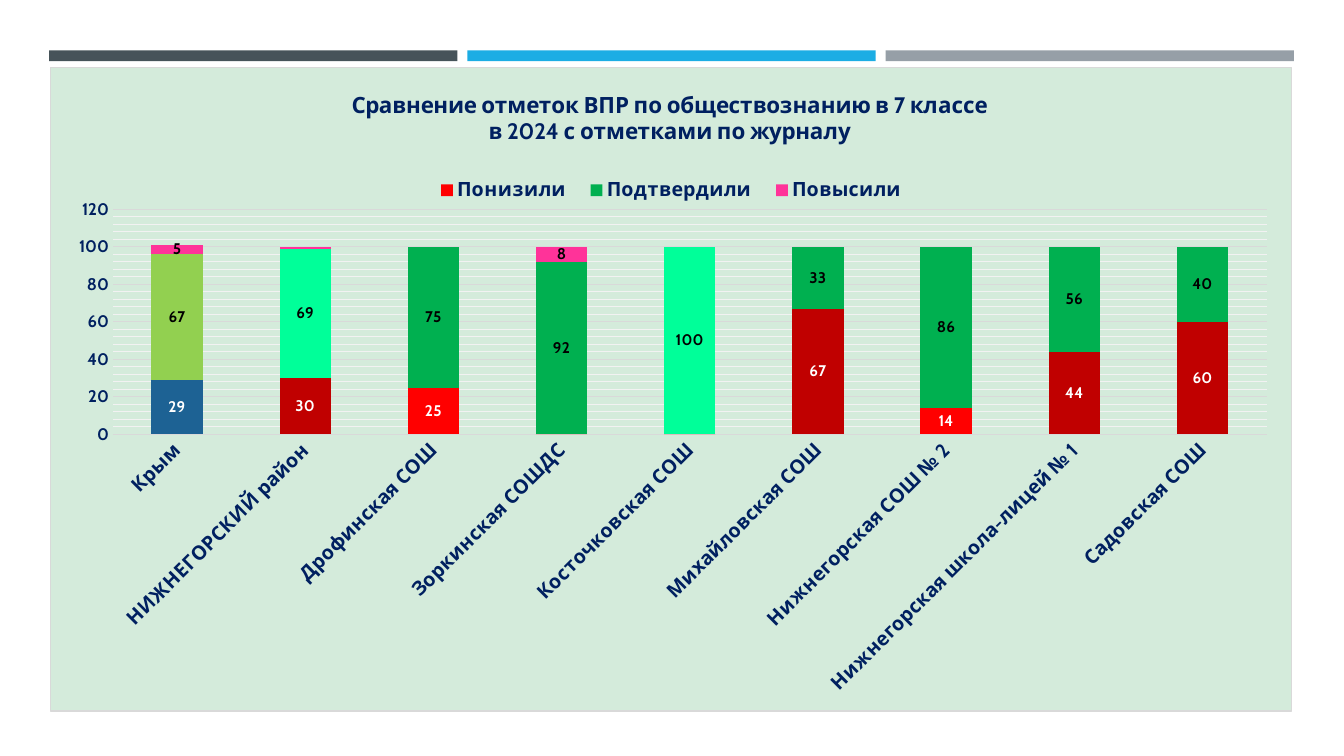
from dataclasses import dataclass

from lxml import etree
from pptx import Presentation
from pptx import util as u
from pptx.chart.data import CategoryChartData
from pptx.dml.color import RGBColor
from pptx.enum import chart as ch
from pptx.enum import shapes
from pptx.oxml import parse_xml
from pptx.oxml.ns import nsdecls, qn


@dataclass(frozen=True)
class Theme:
    """Colours, font and type sizes of the slide."""
    font: str = "Cabin"
    navy: str = "002060"
    black: str = "000000"
    white: str = "FFFFFF"
    panel: str = "D4EBDB"
    rule: str = "D9D9D9"
    minor_rule: str = "F2F2F2"
    strips: tuple = ("465359", "1CADE4", "969FA7")
    title_size: int = 16
    label_size: int = 14
    scale_size: int = 12
    value_size: int = 11


THEME = Theme()
SCHOOLS = ["Крым", "НИЖНЕГОРСКИЙ район", "Дрофинская СОШ", "Зоркинская СОШДС",
           "Косточковская СОШ", "Михайловская СОШ", "Нижнегорская СОШ № 2",
           "Нижнегорская школа-лицей № 1", "Садовская СОШ"]
DARK_RED, MINT = "C00000", "00FF99"
MARKS = [
    ("Понизили", [29, 30, 25, 0, 0, 67, 14, 44, 60], "FF0000", THEME.white,
     {0: "1D6294", 1: DARK_RED, 5: DARK_RED, 7: DARK_RED, 8: DARK_RED}),
    ("Подтвердили", [67, 69, 75, 92, 100, 33, 86, 56, 40], "00B050", THEME.black,
     {0: "92D050", 1: MINT, 4: MINT}),
    ("Повысили", [5, 1, 0, 8, 0, 0, 0, 0, 0], "FF3399", THEME.black, {}),
]
SMALLEST_LABELLED = 5


def paint(fill, colour):
    """Make a fill solid in the given colour."""
    fill.solid()
    fill.fore_color.rgb = RGBColor.from_string(colour)


def style_font(font, size, colour):
    """Apply the bold slide font in a size and colour."""
    font.name, font.size, font.bold = THEME.font, u.Pt(size), True
    font.color.rgb = RGBColor.from_string(colour)


def rule_line(line, colour, width=0.75):
    """Draw a line in a colour and width in points."""
    paint(line.fill, colour)
    line.width = u.Pt(width)


def outline_xml(colour, fill=""):
    """Return chart shape properties with a thin line and an optional fill."""
    return parse_xml(
        f'<c:spPr {nsdecls("c", "a")}>{fill}<a:ln w="9525"><a:solidFill>'
        f'<a:srgbClr val="{colour}"/></a:solidFill></a:ln></c:spPr>')


def place(part, index, **box):
    """Give a chart part a manual layout in fractions of the chart."""
    for old in part.findall(qn("c:layout")):
        part.remove(old)
    layout = etree.Element(qn("c:layout"))
    manual = etree.SubElement(layout, qn("c:manualLayout"))
    if index == 0:
        etree.SubElement(manual, qn("c:layoutTarget"), val="inner")
    for mode in ("xMode", "yMode"):
        etree.SubElement(manual, qn(f"c:{mode}"), val="edge")
    for key, value in box.items():
        etree.SubElement(manual, qn(f"c:{key}"), val=str(value))
    part.insert(index, layout)


def add_strips(slide, left, top, width, height, gap):
    """Draw equal coloured strips across the given box."""
    count = len(THEME.strips)
    strip_width = (width - gap * (count - 1)) / count
    for position, colour in enumerate(THEME.strips):
        strip = slide.shapes.add_shape(
            shapes.MSO_SHAPE.RECTANGLE, u.Cm(left + position * (strip_width + gap)),
            u.Cm(top), u.Cm(strip_width), u.Cm(height))
        strip.shadow.inherit = False
        paint(strip.fill, colour)
        strip.line.fill.background()


def style_panel(chart):
    """Fill and outline the chart area."""
    fill = f'<a:solidFill><a:srgbClr val="{THEME.panel}"/></a:solidFill>'
    chart._chartSpace.find(qn("c:chart")).addnext(outline_xml(THEME.rule, fill))


def style_heading(chart):
    """Write the chart title and place the legend under it."""
    chart.has_title = True
    heading = chart.chart_title.text_frame
    heading.text = ("Сравнение отметок ВПР по обществознанию в 7 классе\n"
                    "в 2024 с отметками по журналу")
    for paragraph in heading.paragraphs:
        for run in paragraph.runs:
            style_font(run.font, THEME.title_size, THEME.navy)
    place(chart.chart_title._element, 1, x=0.24, y=0.03)
    chart.has_legend = True
    legend = chart.legend
    legend.position = ch.XL_LEGEND_POSITION.TOP
    legend.include_in_layout = False
    style_font(legend.font, THEME.label_size, THEME.navy)
    place(legend._element, 1, x=0.3, y=0.16, w=0.4, h=0.06)


def style_axes(chart):
    """Set scale, gridlines and labels of both axes."""
    schools, percent = chart.category_axis, chart.value_axis
    for axis, size in ((schools, THEME.label_size), (percent, THEME.scale_size)):
        axis.major_tick_mark = axis.minor_tick_mark = ch.XL_TICK_MARK.NONE
        style_font(axis.tick_labels.font, size, THEME.navy)
    schools._element.find(qn("c:txPr")).find(qn("a:bodyPr")).set("rot", "-2700000")
    rule_line(schools.format.line, THEME.rule, 1)
    percent.minimum_scale, percent.maximum_scale, percent.major_unit = 0, 120, 20
    percent.minor_unit = 4
    percent.format.line.fill.background()
    percent.has_major_gridlines = percent.has_minor_gridlines = True
    rule_line(percent.major_gridlines.format.line, THEME.rule)
    percent._element.find(qn("c:minorGridlines")).append(outline_xml(THEME.minor_rule))


def style_marks(plot):
    """Colour the stacked columns and label the larger values."""
    plot.gap_width, plot.overlap, plot.vary_by_categories = 150, 100, False
    for series, (_, values, colour, label_colour, exceptions) in zip(plot.series, MARKS):
        paint(series.format.fill, colour)
        series.invert_if_negative = False
        series.data_labels.show_value = False
        for index, special in exceptions.items():
            paint(series.points[index].format.fill, special)
        for index, value in enumerate(values):
            if value >= SMALLEST_LABELLED:
                label = series.points[index].data_label
                style_font(label.font, THEME.value_size, label_colour)
                label.position = ch.XL_LABEL_POSITION.CENTER


def add_comparison(slide, left, top, width, height):
    """Build the chart of marks by school in the given box."""
    marks = CategoryChartData(number_format="0")
    marks.categories = SCHOOLS
    for name, values, *_ in MARKS:
        marks.add_series(name, values)
    chart = slide.shapes.add_chart(
        ch.XL_CHART_TYPE.COLUMN_STACKED, u.Cm(left), u.Cm(top),
        u.Cm(width), u.Cm(height), marks).chart
    chart.font.name, chart.font.size = THEME.font, u.Pt(10)
    style_panel(chart)
    style_heading(chart)
    style_axes(chart)
    style_marks(chart.plots[0])
    plot_area = chart._chartSpace.find(qn("c:chart")).find(qn("c:plotArea"))
    place(plot_area, 0, x=0.05, y=0.22, w=0.93, h=0.35)


def main():
    """Create the slide and save it."""
    deck = Presentation()
    deck.slide_width, deck.slide_height = u.Cm(33.87), u.Cm(19.05)
    slide = deck.slides.add_slide(deck.slide_layouts[6])
    add_strips(slide, 1.24, 1.27, 31.37, 0.27, 0.25)
    add_comparison(slide, 1.27, 1.7, 31.29, 16.23)
    deck.save("out.pptx")


if __name__ == "__main__":
    main()
